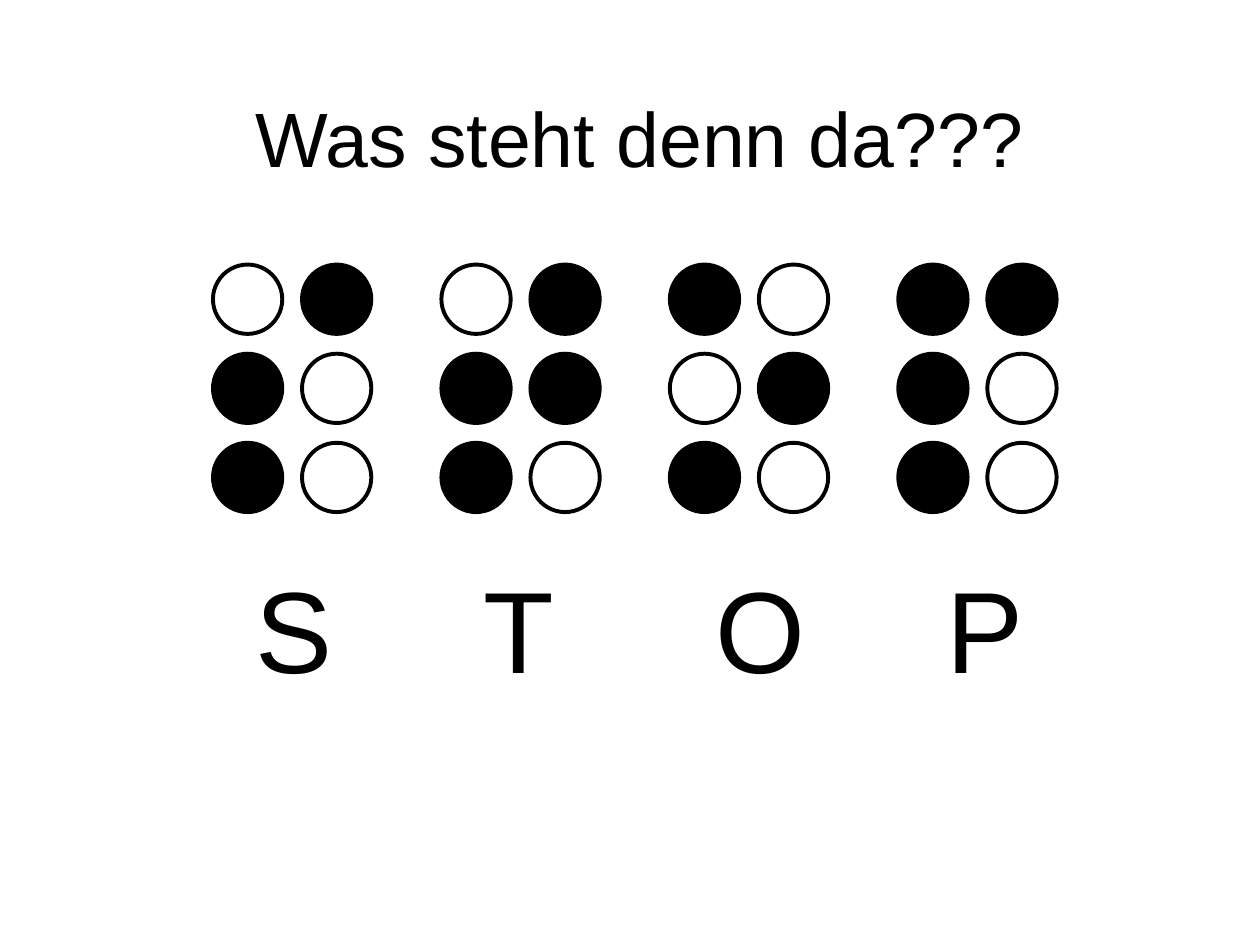
from dataclasses import dataclass

from pptx import Presentation
from pptx.dml.color import RGBColor
from pptx.enum.shapes import MSO_SHAPE
from pptx.enum.text import MSO_ANCHOR, MSO_AUTO_SIZE, PP_ALIGN
from pptx.shapes.group import GroupShape
from pptx.util import Inches, Pt

OVAL = MSO_SHAPE.OVAL
MIDDLE, TOP = MSO_ANCHOR.MIDDLE, MSO_ANCHOR.TOP
CENTER, LEFT = PP_ALIGN.CENTER, PP_ALIGN.LEFT
FIT_SHAPE, NO_FIT = MSO_AUTO_SIZE.SHAPE_TO_FIT_TEXT, MSO_AUTO_SIZE.NONE

COLORS = {"ink": "000000", "paper": "FFFFFF"}
FONT = "Arial"
GRID_LEFT, GRID_TOP = 1.69, 2.1
CELL_PITCH, DOT_PITCH, DOT_SIZE = 1.813, 0.707, 0.55
DOT_ROWS = 3
LETTER_TOP, LETTER_HEIGHT = 4.38, 1.2


@dataclass
class BrailleLetter:
    letter: str
    raised_dots: set[int]
    text_left: float
    text_width: float


LETTERS = [
    BrailleLetter("S", {2, 3, 4}, 1.93, 0.81),
    BrailleLetter("T", {2, 3, 4, 5}, 3.74, 0.76),
    BrailleLetter("O", {1, 3, 5}, 5.58, 0.91),
    BrailleLetter("P", {1, 2, 3, 4}, 7.41, 0.81),
]


def color(name: str) -> RGBColor:
    return RGBColor.from_string(COLORS[name])


def add_text(shapes, text: str, box: tuple[float, ...], size: int, title: bool = False) -> None:
    shape = shapes.add_textbox(*map(Inches, box))
    frame = shape.text_frame
    frame.word_wrap = title
    frame.auto_size = NO_FIT if title else FIT_SHAPE
    frame.vertical_anchor = MIDDLE if title else TOP
    paragraph = frame.paragraphs[0]
    paragraph.alignment = CENTER if title else LEFT
    run = paragraph.add_run()
    run.text = text
    run.font.name = FONT
    run.font.size = Pt(size)
    run.font.color.rgb = color("ink")


def add_dot(group: GroupShape, left: float, top: float, raised: bool) -> None:
    shape = group.shapes.add_shape(OVAL, *map(Inches, (left, top, DOT_SIZE, DOT_SIZE)))
    shape.shadow.inherit = False
    if raised:
        shape.fill.solid()
        shape.fill.fore_color.rgb = color("ink")
    else:
        shape.fill.background()
    shape.line.color.rgb = color("ink")
    shape.line.width = Pt(2.25)


def add_braille_cell(group: GroupShape, index: int, braille: BrailleLetter) -> None:
    for dot in range(2 * DOT_ROWS):
        column, row = divmod(dot, DOT_ROWS)
        left = GRID_LEFT + index * CELL_PITCH + column * DOT_PITCH
        top = GRID_TOP + row * DOT_PITCH
        add_dot(group, left, top, dot + 1 in braille.raised_dots)


def main() -> None:
    presentation = Presentation()
    presentation.slide_width, presentation.slide_height = Inches(10), Inches(7.5)
    slide = presentation.slides.add_slide(presentation.slide_layouts[6])
    slide.background.fill.solid()
    slide.background.fill.fore_color.rgb = color("paper")
    add_text(slide.shapes, "Was steht denn da???", (0.83, 0.28, 8.5, 1.61), 44, title=True)
    dots = slide.shapes.add_group_shape()
    for index, braille in enumerate(LETTERS):
        add_braille_cell(dots, index, braille)
    solution = slide.shapes.add_group_shape()
    for braille in LETTERS:
        box = (braille.text_left, LETTER_TOP, braille.text_width, LETTER_HEIGHT)
        add_text(solution.shapes, braille.letter, box, 66)
    presentation.save("out.pptx")


if __name__ == "__main__":
    main()
